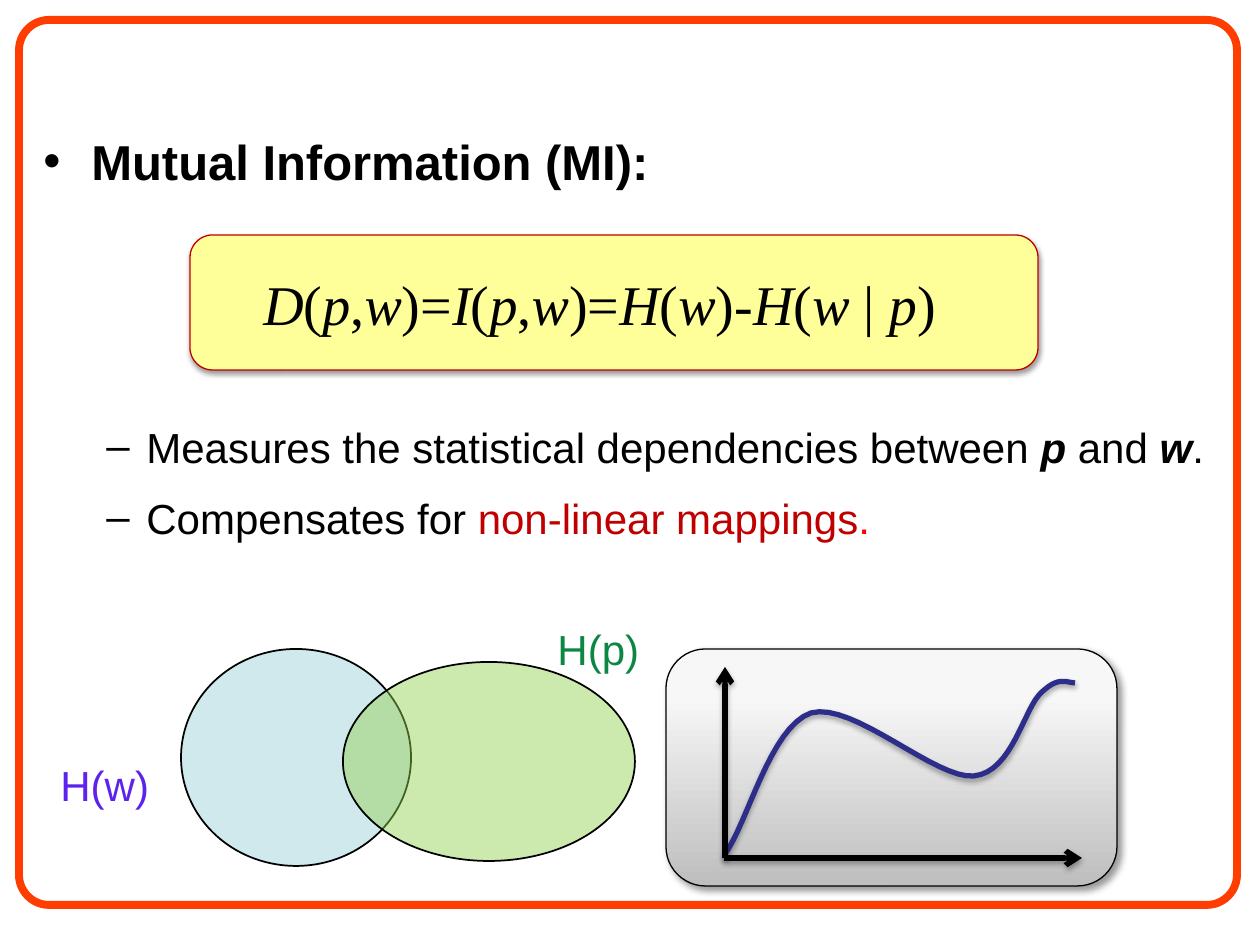
import itertools
from typing import NamedTuple

import lxml.etree
import pptx
import pptx.dml.color
import pptx.enum.shapes
import pptx.enum.text
import pptx.oxml.ns
import pptx.util

SCALE = 914400 / 126
KIND = pptx.enum.shapes.MSO_SHAPE
STEPS = 16


class Shade(NamedTuple):
    alpha: int
    blur: float
    dist: float
    angle: int


class Form(NamedTuple):
    kind: int
    box: tuple[int, int, int, int]
    edge: str
    width: float
    fill: str = ""
    alpha: int = 100
    round: float | None = None
    fade: str = ""
    shade: Shade | None = None


class Label(NamedTuple):
    text: str
    box: tuple[int, int, int, int]
    color: str


class Arrow(NamedTuple):
    start: tuple[int, int]
    end: tuple[int, int]


SOFT = Shade(35, 3.1, 1.8, 90)
FRAME = Form(KIND.ROUNDED_RECTANGLE, (19, 20, 1218, 885), "FF3D01", 4.5, round=0.034)
PANEL = Form(KIND.ROUNDED_RECTANGLE, (666, 649, 451, 237), "000000", 0.75,
             fill="BEBEBE", fade="F7F7F7", shade=Shade(40, 4, 3, 45))
BANNER = Form(KIND.ROUNDED_RECTANGLE, (190, 235, 848, 135), "C00000", 0.75,
              fill="FFFF99", shade=Shade(38, 3.1, 1.6, 90))
SETS = [
    Form(KIND.OVAL, (181, 649, 230, 217), "000000", 1, fill="BBE0E3", alpha=68),
    Form(KIND.OVAL, (343, 662, 292, 199), "000000", 1, fill="92D050", alpha=46),
]
LABELS = [
    Label("H(w)", (48, 753, 115, 63), "5D23ED"),
    Label("H(p)", (545, 617, 108, 63), "0B8743"),
]
AXES = [Arrow((724, 858), (1082, 858)), Arrow((725, 858), (725, 667))]
CURVE = [
    (725, 854), (747, 825), (770, 727), (811, 713),
    (853, 701), (936, 780), (974, 776),
    (1013, 772), (1024, 707), (1042, 692),
    (1058, 677), (1065, 682), (1075, 683),
]
FORMULA = "D(p,w)=I(p,w)=H(w)-H(w | p)"


def px(num: float) -> int:
    return round(num * SCALE)


def tint(code: str):
    return pptx.dml.color.RGBColor.from_string(code)


def node(base, tag: str, **attrs):
    item = lxml.etree.SubElement(base, pptx.oxml.ns.qn(tag))
    for key, val in attrs.items():
        item.set(key, str(val))
    return item


def cast(shape, shade: Shade | None) -> None:
    group = node(shape._element.spPr, "a:effectLst")
    if shade:
        outer = node(group, "a:outerShdw", blurRad=pptx.util.Pt(shade.blur),
                     dist=pptx.util.Pt(shade.dist), dir=shade.angle * 60000,
                     algn="ctr", rotWithShape=0)
        color = node(outer, "a:srgbClr", val="000000")
        node(color, "a:alpha", val=shade.alpha * 1000)


def stroke(shape, color: str, width: float) -> None:
    shape.line.color.rgb = tint(color)
    shape.line.width = pptx.util.Pt(width)


def draw(slide, form: Form) -> None:
    shape = slide.shapes.add_shape(form.kind, *map(px, form.box))
    if form.round is not None:
        shape.adjustments[0] = form.round
    if form.fade:
        shape.fill.gradient()
        shape.fill.gradient_angle = 90
        stops = shape.fill.gradient_stops
        for stop, code, place in zip(stops, (form.fill, form.fade), (0, 0.8)):
            stop.color.rgb = tint(code)
            stop.position = place
    elif form.fill:
        shape.fill.solid()
        shape.fill.fore_color.rgb = tint(form.fill)
        if form.alpha < 100:
            color = shape._element.spPr.find(".//" + pptx.oxml.ns.qn("a:srgbClr"))
            node(color, "a:alpha", val=form.alpha * 1000)
    else:
        shape.fill.background()
    stroke(shape, form.edge, form.width)
    cast(shape, form.shade)


def write(para, text: str, *, size: int = 24, font: str = "Arial",
          color: str = "000000", bold: bool = False, slant: bool = False) -> None:
    run = para.add_run()
    run.text = text
    run.font.size = pptx.util.Pt(size)
    run.font.name = font
    run.font.color.rgb = tint(color)
    run.font.bold = bold
    run.font.italic = slant


def field(slide, box: tuple[int, int, int, int], wrap: bool = False):
    frame = slide.shapes.add_textbox(*map(px, box)).text_frame
    frame.word_wrap = wrap
    return frame


def point(para, mark: str, left: int, hang: int, before: float) -> None:
    para.space_before = pptx.util.Pt(before)
    para.space_after = pptx.util.Pt(6)
    props = para._p.get_or_add_pPr()
    props.set("marL", str(px(left)))
    props.set("indent", str(px(-hang)))
    node(props, "a:buFont", typeface="Arial")
    node(props, "a:buChar", char=mark)


def body(slide) -> None:
    frame = field(slide, (31, 125, 1196, 741), wrap=True)
    head = frame.paragraphs[0]
    point(head, "•", 48, 48, 0)
    write(head, "Mutual Information (MI):", size=28, bold=True)

    first = frame.add_paragraph()
    point(first, "–", 103, 40, 126)
    for text, strong in [("Measures the statistical dependencies between ", False),
                         ("p", True), (" and ", False), ("w", True), (".", False)]:
        write(first, text, bold=strong, slant=strong)

    second = frame.add_paragraph()
    point(second, "–", 103, 40, 5.8)
    for text, color in [("Compensates for ", "000000"),
                        ("non-linear mappings", "C00000"), (".", "FF0000")]:
        write(second, text, color=color)


def curve(slide) -> None:
    dots = []
    for base in range(0, len(CURVE) - 1, 3):
        knots = CURVE[base:base + 4]
        for step in range(1, STEPS + 1):
            t = step / STEPS
            rates = ((1 - t) ** 3, 3 * t * (1 - t) ** 2, 3 * t * t * (1 - t), t ** 3)
            dots.append(tuple(px(sum(rate * val for rate, val in zip(rates, axis)))
                              for axis in zip(*knots)))
    pen = slide.shapes.build_freeform(*map(px, CURVE[0]))
    pen.add_line_segments(dots, close=False)
    shape = pen.convert_to_shape()
    shape.fill.background()
    stroke(shape, "2D2D8A", 3)
    cast(shape, SOFT)


def axis(slide, arrow: Arrow) -> None:
    line = slide.shapes.add_connector(pptx.enum.shapes.MSO_CONNECTOR.STRAIGHT,
                                      *map(px, arrow.start + arrow.end))
    stroke(line, "000000", 3)
    node(line.line._get_or_add_ln(), "a:tailEnd", type="arrow")
    cast(line, SOFT)


def main() -> None:
    deck = pptx.Presentation()
    deck.slide_width, deck.slide_height = px(1260), px(945)
    slide = deck.slides.add_slide(deck.slide_layouts[6])
    for form in (FRAME, PANEL, BANNER):
        draw(slide, form)
    body(slide)
    curve(slide)
    for arrow in AXES:
        axis(slide, arrow)
    for form in SETS:
        draw(slide, form)
    for label in LABELS:
        write(field(slide, label.box).paragraphs[0], label.text, color=label.color)
    line = field(slide, (251, 263, 703, 81)).paragraphs[0]
    for slant, signs in itertools.groupby(FORMULA, str.isalpha):
        write(line, "".join(signs), size=32, font="Times New Roman", slant=slant)
    deck.save("out.pptx")


if __name__ == "__main__":
    main()
